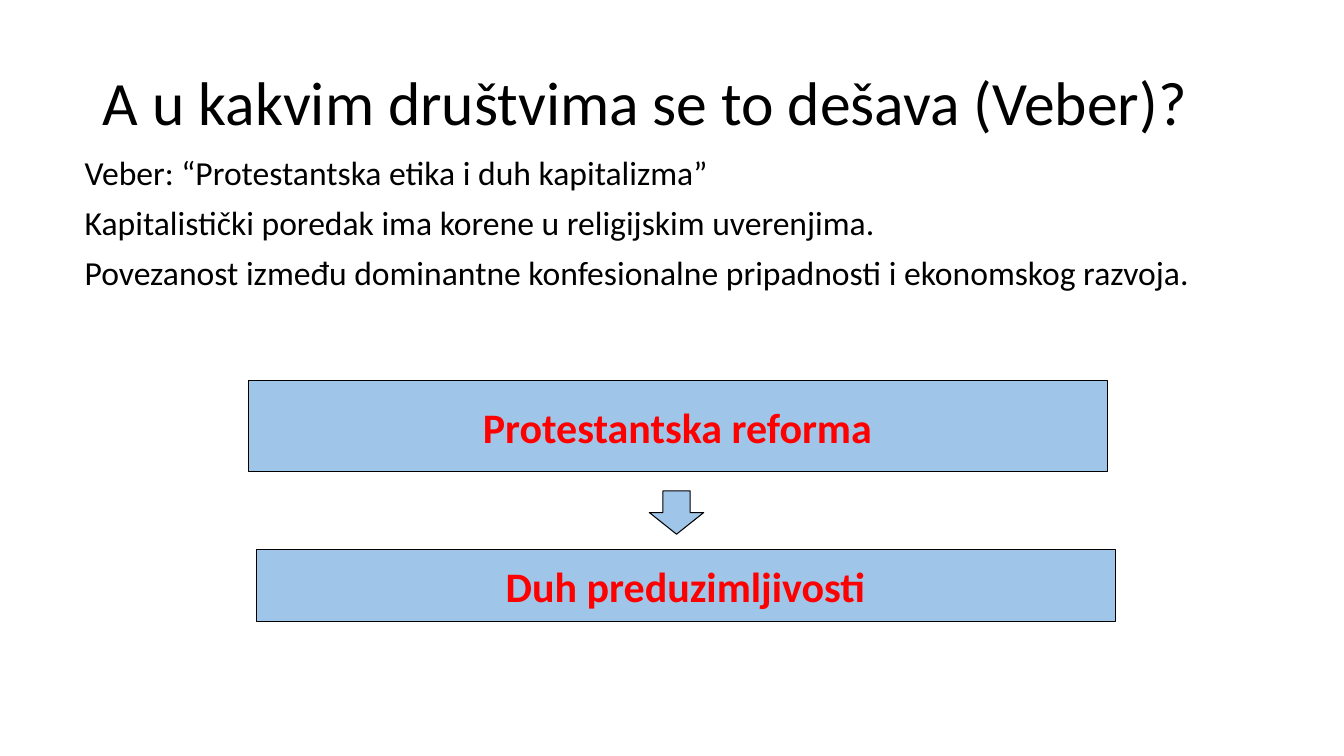
from dataclasses import dataclass

from lxml import etree
from pptx import Presentation
from pptx.dml.color import RGBColor
from pptx.enum.shapes import MSO_SHAPE
from pptx.enum.text import MSO_ANCHOR, MSO_AUTO_SIZE, PP_ALIGN
from pptx.oxml.ns import qn
from pptx.util import Inches, Pt

RECT, ARROW = MSO_SHAPE.RECTANGLE, MSO_SHAPE.DOWN_ARROW
TOP, MIDDLE = MSO_ANCHOR.TOP, MSO_ANCHOR.MIDDLE
LEFT, CENTER = PP_ALIGN.LEFT, PP_ALIGN.CENTER
FIXED = MSO_AUTO_SIZE.NONE


@dataclass(frozen=True)
class Theme:
    font: str = "Calibri"
    ink: RGBColor = RGBColor(0, 0, 0)
    accent: RGBColor = RGBColor(255, 0, 0)
    fill: RGBColor = RGBColor(0x9F, 0xC5, 0xE8)
    title: Pt = Pt(44)
    body: Pt = Pt(24)
    label: Pt = Pt(30)
    line: Pt = Pt(0.75)


def apply(target, values):
    for name, value in values.items():
        setattr(target, name, value)


class Page:
    def __init__(self, deck, theme):
        self.theme = theme
        self.slide = deck.slides.add_slide(deck.slide_layouts[1])

    def place(self, shape, box):
        names = ("left", "top", "width", "height")
        apply(shape, dict(zip(names, map(Inches, box))))

    def label(self, shape, lines, color, anchor, para, font):
        """Fill a shape with formatted paragraphs."""
        frame = shape.text_frame
        apply(frame, {"word_wrap": True, "auto_size": FIXED,
                      "vertical_anchor": anchor})
        frame.text = "\n".join(lines)
        for item in frame.paragraphs:
            apply(item, para)
            for run in item.runs:
                apply(run.font, {"name": self.theme.font, **font})
                run.font.color.rgb = color

    def title(self, text, box):
        shape = self.slide.shapes.title
        self.place(shape, box)
        self.label(shape, [text], self.theme.ink, MIDDLE,
                   {"alignment": LEFT, "line_spacing": 0.9},
                   {"size": self.theme.title})

    def body(self, lines, box):
        shape = self.slide.placeholders[1]
        self.place(shape, box)
        self.label(shape, lines, self.theme.ink, TOP,
                   {"alignment": LEFT, "line_spacing": 0.9,
                    "space_before": Pt(10)},
                   {"size": self.theme.body})
        items = shape.text_frame.paragraphs
        items[0].space_before = Pt(0)
        for item in items:
            props = item._p.get_or_add_pPr()
            props.set("marL", "0")
            props.set("indent", "0")
            etree.SubElement(props, qn("a:buNone"))

    def shape(self, kind, box):
        shape = self.slide.shapes.add_shape(kind, *map(Inches, box))
        shape.shadow.inherit = False
        shape.fill.solid()
        shape.fill.fore_color.rgb = self.theme.fill
        shape.line.color.rgb = self.theme.ink
        shape.line.width = self.theme.line
        return shape

    def block(self, text, box):
        shape = self.shape(RECT, box)
        self.label(shape, [text], self.theme.accent, MIDDLE,
                   {"alignment": CENTER},
                   {"size": self.theme.label, "bold": True})


def main():
    deck = Presentation()
    apply(deck, {"slide_width": Inches(13.33), "slide_height": Inches(7.5)})
    page = Page(deck, Theme())
    page.body([
        "Veber: “Protestantska etika i duh kapitalizma”",
        "Kapitalistički poredak ima korene u religijskim uverenjima.",
        "Povezanost između dominantne konfesionalne pripadnosti"
        " i ekonomskog razvoja.",
    ], (0.74, 1.5, 12.1, 1.99))
    page.title("A u kakvim društvima se to dešava (Veber)?",
               (0.92, 0.32, 11.5, 1.45))
    page.block("Protestantska reforma", (2.46, 3.78, 8.52, 0.9))
    page.block("Duh preduzimljivosti", (2.54, 5.45, 8.52, 0.72))
    page.shape(ARROW, (6.44, 4.87, 0.54, 0.43))
    deck.save("out.pptx")


if __name__ == "__main__":
    main()
